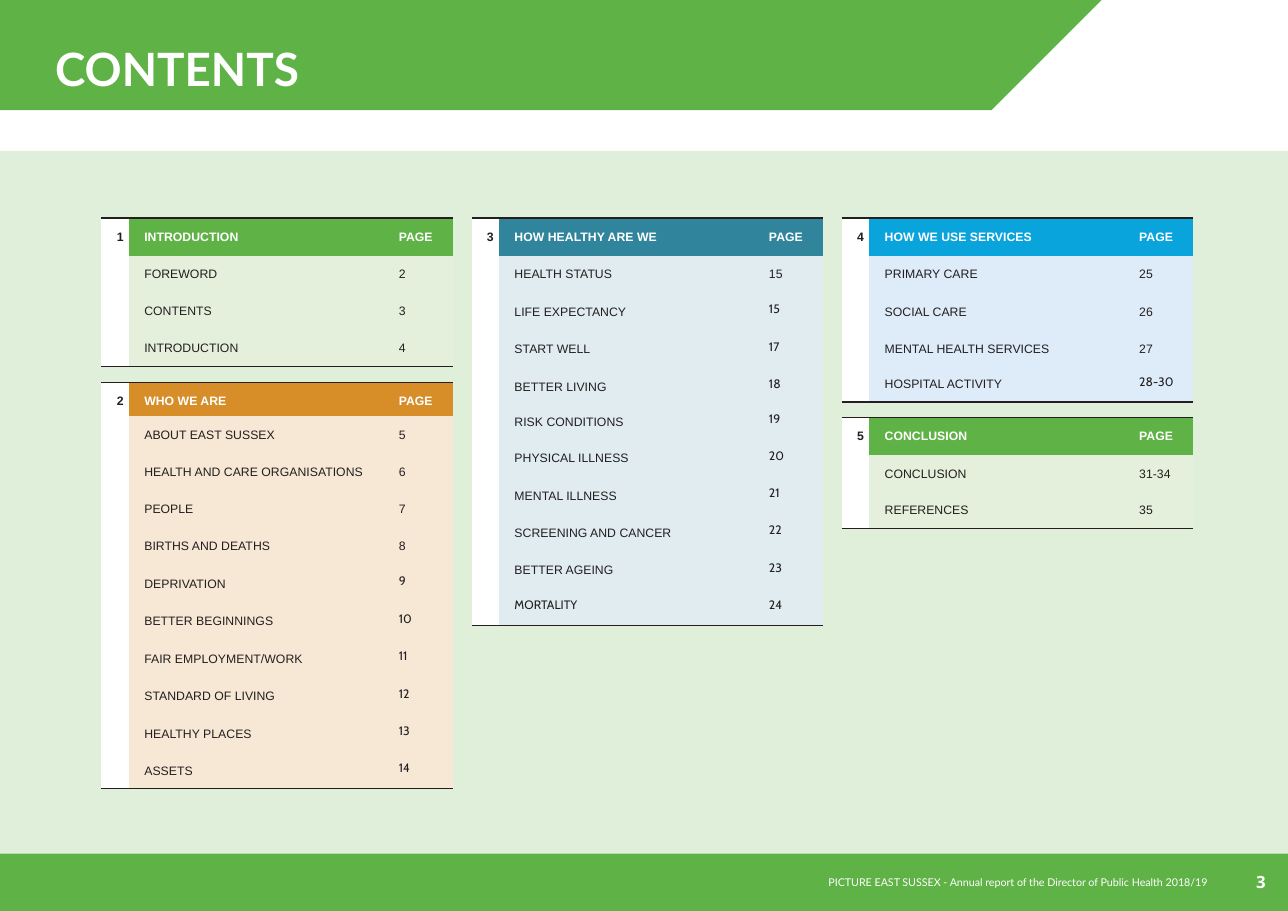
"""Build the contents page of a public health report."""
from dataclasses import dataclass

from lxml.etree import SubElement
from pptx import Presentation
from pptx.dml.color import RGBColor as RGB
from pptx.enum.shapes import MSO_SHAPE as SHAPE
from pptx.oxml.ns import qn
from pptx.util import Inches, Pt

ARIAL, CABIN = "Arial", "Cabin"

# Rows: label, page, row height, space above, label font, page font
SECTIONS = [
    (0, "1", "INTRODUCTION", "green", 1.21, 0.34, [
        ("FOREWORD", "2", 0.35, 0.11, ARIAL, ARIAL),
        ("CONTENTS", "3", 0.34, 0.09, ARIAL, ARIAL),
        ("INTRODUCTION", "4", 0.32, 0.09, ARIAL, ARIAL),
    ]),
    (0, "2", "WHO WE ARE", "orange", 0.68, 0.31, [
        ("ABOUT EAST SUSSEX", "5", 0.35, 0.11, ARIAL, ARIAL),
        ("HEALTH AND CARE ORGANISATIONS", "6", 0.34, 0.09, ARIAL, ARIAL),
        ("PEOPLE", "7", 0.34, 0.09, ARIAL, ARIAL),
        ("BIRTHS AND DEATHS", "8", 0.32, 0.09, ARIAL, ARIAL),
        ("DEPRIVATION", "9", 0.34, 0.11, ARIAL, CABIN),
        ("BETTER BEGINNINGS", "10", 0.34, 0.11, ARIAL, CABIN),
        ("FAIR EMPLOYMENT/WORK", "11", 0.34, 0.11, ARIAL, CABIN),
        ("STANDARD OF LIVING", "12", 0.34, 0.11, ARIAL, CABIN),
        ("HEALTHY PLACES", "13", 0.34, 0.11, ARIAL, CABIN),
        ("ASSETS", "14", 0.33, 0.11, ARIAL, CABIN),
    ]),
    (1, "3", "HOW HEALTHY ARE WE", "teal", 0.96, 0.34, [
        ("HEALTH STATUS", "15", 0.34, 0.11, ARIAL, ARIAL),
        ("LIFE EXPECTANCY", "15", 0.34, 0.11, ARIAL, CABIN),
        ("START WELL", "17", 0.34, 0.11, ARIAL, CABIN),
        ("BETTER LIVING", "18", 0.33, 0.11, ARIAL, CABIN),
        ("RISK CONDITIONS", "19", 0.32, 0.1, ARIAL, CABIN),
        ("PHYSICAL ILLNESS", "20", 0.34, 0.11, ARIAL, CABIN),
        ("MENTAL ILLNESS", "21", 0.34, 0.11, ARIAL, CABIN),
        ("SCREENING AND CANCER", "22", 0.34, 0.11, ARIAL, CABIN),
        ("BETTER AGEING", "23", 0.34, 0.11, ARIAL, CABIN),
        ("MORTALITY", "24", 0.33, 0.11, CABIN, CABIN),
    ]),
    (2, "4", "HOW WE USE SERVICES", "blue", 0.94, 0.34, [
        ("PRIMARY CARE", "25", 0.36, 0.11, ARIAL, ARIAL),
        ("SOCIAL CARE", "26", 0.34, 0.09, ARIAL, ARIAL),
        ("MENTAL HEALTH SERVICES", "27", 0.31, 0.09, ARIAL, ARIAL),
        ("HOSPITAL ACTIVITY", "28-30", 0.32, 0.1, ARIAL, CABIN),
    ]),
    (2, "5", "CONCLUSION", "green", 1.27, 0.34, [
        ("CONCLUSION", "31-34", 0.35, 0.11, ARIAL, ARIAL),
        ("REFERENCES", "35", 0.32, 0.09, ARIAL, ARIAL),
    ]),
]


@dataclass(frozen=True)
class Theme:
    green: tuple = ("5FB246", "E4EFDC")
    orange: tuple = ("D78D28", "F7E8D5")
    teal: tuple = ("30859C", "E0ECF0")
    blue: tuple = ("08A4DB", "DEEBF8")
    white: str = "FFFFFF"
    ink: str = "231F20"
    title: int = 30
    folio: int = 11
    entry: int = 8
    footer: int = 7


THEME = Theme()
WIDTH, HEIGHT = 11.69, 8.27
BAND, FOOT = 1.36, 7.75
LEFT, TOP, PITCH, STACK_GAP = 0.92, 1.98, 3.36, 0.14
TABLE_WIDTH, NUMBER_WIDTH, LABEL_INDENT, PAGE_INSET = 3.19, 0.25, 0.14, 0.49
CABIN_LIFT = 0.03


def apply(target, formats):
    for name, value in formats.items():
        setattr(target, name, value)


def margins(left, top):
    return dict(margin_left=Inches(left), margin_top=Inches(top), margin_right=0, margin_bottom=0)


def write(frame, text, size, face, color, bold=False):
    run = frame.paragraphs[0].add_run()
    run.text = text
    apply(run.font, dict(size=Pt(size), name=face, bold=bold))
    run.font.color.rgb = RGB.from_string(color)


def paint(shape, color, alpha=None):
    shape.shadow.inherit = False
    shape.line.fill.background()
    shape.fill.solid()
    shape.fill.fore_color.rgb = RGB.from_string(color)
    if alpha:
        tint = next(shape.element.spPr.iter(qn("a:srgbClr")))
        SubElement(tint, qn("a:alpha"), val=str(alpha * 1000))


def add_text(slide, box, text, size, face, bold):
    frame = slide.shapes.add_textbox(*map(Inches, box)).text_frame
    apply(frame, dict(word_wrap=True, **margins(0.01, 0.01)))
    write(frame, text, size, face, THEME.white, bold)


def fill_cell(cell, text, indent, pad, color, face, ink, bold, fill):
    apply(cell, margins(indent, pad))
    cell.fill.solid()
    cell.fill.fore_color.rgb = RGB.from_string(fill)
    write(cell.text_frame, text, THEME.entry, face, ink, bold)


def rule(cell, side):
    line = cell.fill._xPr.makeelement(qn(f"a:{side}"), w=str(Pt(1)))
    SubElement(SubElement(line, qn("a:solidFill")), qn("a:srgbClr"), val=THEME.ink)
    cell.fill._xPr.insert(0, line)


def add_section(slide, top, section):
    column, number, heading, hue, page_width, head_height, entries = section
    strong, pale = getattr(THEME, hue)
    heights = [head_height] + [entry[2] for entry in entries]
    box = (LEFT + column * PITCH, top, TABLE_WIDTH, sum(heights))
    holder = slide.shapes.add_table(len(heights), 3, *map(Inches, box))
    next(holder.element.iter(qn("a:tableStyleId"))).text = "{2D5ABB26-0587-4C30-8999-92F81FD0307C}"
    table = holder.table
    apply(table, dict(first_row=False, horz_banding=False))
    widths = (NUMBER_WIDTH, TABLE_WIDTH - NUMBER_WIDTH - page_width, page_width)
    for track, width in zip(table.columns, widths):
        track.width = Inches(width)
    for track, height in zip(table.rows, heights):
        track.height = Inches(height)

    last = len(entries)
    for row in range(last + 1):
        apply(table.cell(row, 0), margins(0, 0))
    table.cell(0, 0).merge(table.cell(last, 0))
    fill_cell(table.cell(0, 0), number, LABEL_INDENT, 0.11, THEME.white, ARIAL,
              THEME.ink, True, THEME.white)
    lines = [(heading, "PAGE", head_height, 0.11, ARIAL, ARIAL)] + entries
    for row, (label, page, _, pad, *faces) in enumerate(lines):
        ink, fill = (THEME.ink, pale) if row else (THEME.white, strong)
        indents = (LABEL_INDENT, page_width - PAGE_INSET)
        for col, (text, indent, face) in enumerate(zip((label, page), indents, faces), 1):
            lift = CABIN_LIFT if face == CABIN else 0
            fill_cell(table.cell(row, col), text, indent, pad - lift, fill, face, ink, not row, fill)
    for col in range(3):
        rule(table.cell(0, col), "lnT")
        rule(table.cell(last, col), "lnB")
    rule(table.cell(0, 0), "lnB")
    first = table.cell(0, 0).fill._xPr
    first.insert(0, first.find(qn("a:lnT")))
    return top + sum(heights) + STACK_GAP


def main():
    deck = Presentation()
    apply(deck, dict(slide_width=Inches(WIDTH), slide_height=Inches(HEIGHT)))
    slide = deck.slides.add_slide(deck.slide_layouts[6])
    for top, bottom, alpha in ((BAND + 0.01, FOOT, 20), (FOOT, HEIGHT, None)):
        box = (0, top, WIDTH, bottom - top)
        paint(slide.shapes.add_shape(SHAPE.RECTANGLE, *map(Inches, box)), THEME.green[0], alpha)
    banner = slide.shapes.build_freeform(10.36, 0, scale=Inches(1))
    banner.add_line_segments([(0.01, 0), (0.01, BAND), (8.74, BAND)])
    paint(banner.convert_to_shape(), THEME.green[0])

    add_text(slide, (0.49, 0.36, 2.99, 0.53), "CONTENTS", THEME.title, "Lato", True)
    add_text(slide, (7.51, 7.94, 3.66, 0.13),
             "PICTURE EAST SUSSEX - Annual report of the Director of Public Health 2018/19",
             THEME.footer, "Lato", False)
    add_text(slide, (11.39, 7.9, 0.12, 0.21), "3", THEME.folio, "Open Sans", True)

    tops = {}
    for section in SECTIONS:
        column = section[0]
        tops[column] = add_section(slide, tops.get(column, TOP), section)
    deck.save("out.pptx")


if __name__ == "__main__":
    main()
